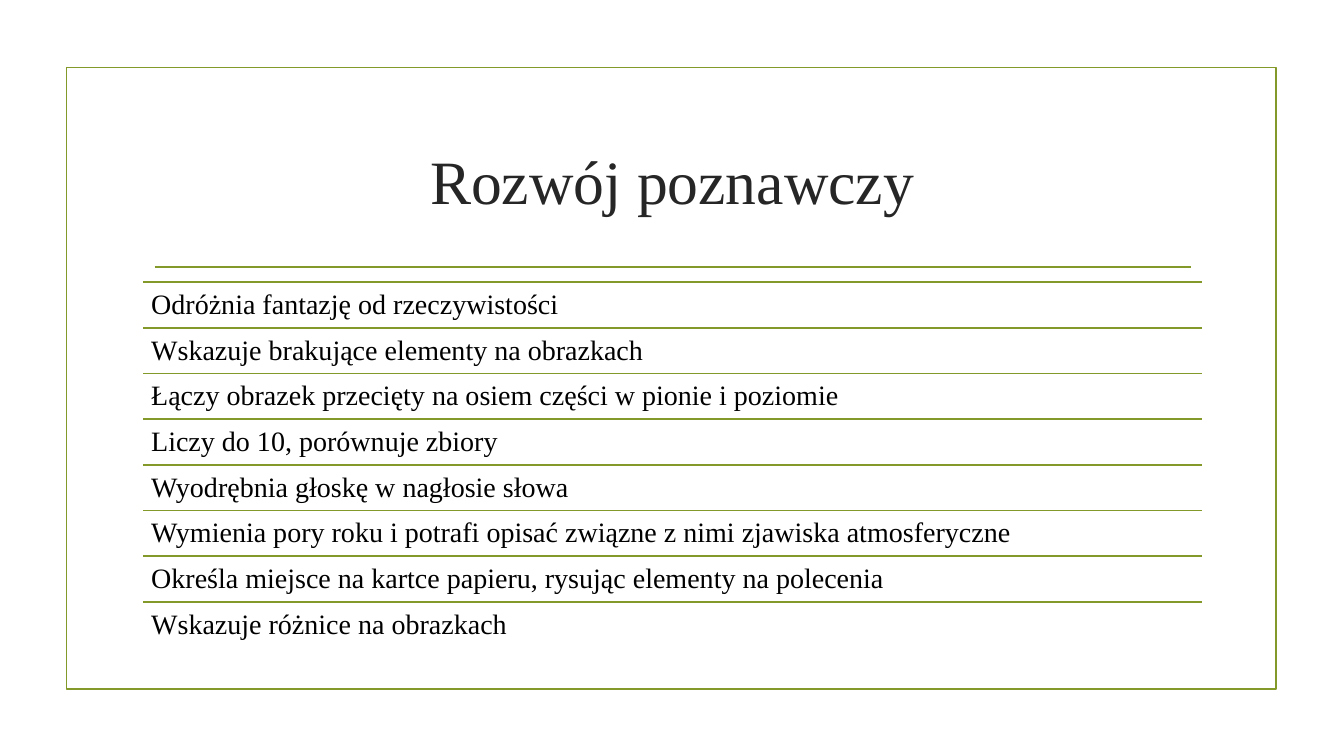
from dataclasses import dataclass

from lxml import etree
from pptx import Presentation
from pptx.dml.color import RGBColor
from pptx.enum.shapes import MSO_CONNECTOR, MSO_SHAPE
from pptx.enum.text import MSO_ANCHOR, PP_ALIGN
from pptx.oxml.ns import qn
from pptx.slide import Slide
from pptx.util import Inches, Pt

STRAIGHT = MSO_CONNECTOR.STRAIGHT
RECTANGLE = MSO_SHAPE.RECTANGLE
TOP, MIDDLE = MSO_ANCHOR.TOP, MSO_ANCHOR.MIDDLE
LEFT, CENTER = PP_ALIGN.LEFT, PP_ALIGN.CENTER

COLORS = {"olive": "83992A", "heading": "262626", "body": "000000"}
FONT = "Times New Roman"
SLIDE_WIDTH, SLIDE_HEIGHT = Inches(13.33), Inches(7.5)
LINE_WIDTH = Pt(1.25)


@dataclass(frozen=True)
class Area:
    """Position and size in percent of the slide's width and height."""
    left: float
    top: float
    width: float
    height: float = 0

    def emu(self) -> tuple[int, int, int, int]:
        return (across(self.left), down(self.top),
                across(self.width), down(self.height))


@dataclass(frozen=True)
class TextStyle:
    size: int
    color: str
    align: int
    anchor: int
    inset: float
    line_spacing: float


FRAME = Area(4.95, 8.93, 90.02, 82.27)
HEADING = Area(10.65, 14.27, 78.77, 19.07)
HEADING_RULE = Area(11.5, 35.33, 77.1)
SKILLS_TOP, SKILL_HEIGHT = 37.33, 6.04

HEADING_STYLE = TextStyle(44, "heading", CENTER, MIDDLE, 0.1, 1.0)
SKILL_STYLE = TextStyle(20, "body", LEFT, TOP, 0.08, 0.9)

SKILLS = [
    "Odróżnia fantazję od rzeczywistości",
    "Wskazuje brakujące elementy na obrazkach",
    "Łączy obrazek przecięty na osiem części w pionie i poziomie",
    "Liczy do 10, porównuje zbiory",
    "Wyodrębnia głoskę w nagłosie słowa",
    "Wymienia pory roku i potrafi opisać związne z nimi zjawiska atmosferyczne",
    "Określa miejsce na kartce papieru, rysując elementy na polecenia",
    "Wskazuje różnice na obrazkach",
]


def across(percent: float) -> int:
    return round(SLIDE_WIDTH * percent / 100)


def down(percent: float) -> int:
    return round(SLIDE_HEIGHT * percent / 100)


def rgb(name: str) -> RGBColor:
    return RGBColor.from_string(COLORS[name])


def draw_frame(slide: Slide, area: Area) -> None:
    frame = slide.shapes.add_shape(RECTANGLE, *area.emu())
    frame.shadow.inherit = False
    frame.fill.background()
    frame.line.color.rgb = rgb("olive")
    frame.line.width = LINE_WIDTH


def draw_rule(slide: Slide, area: Area) -> None:
    """Draw a horizontal line along the top of the area."""
    left, top, width, _ = area.emu()
    rule = slide.shapes.add_connector(STRAIGHT, left, top, left + width, top)
    rule.line.color.rgb = rgb("olive")
    rule.line.width = LINE_WIDTH
    etree.SubElement(rule._element.spPr, qn("a:effectLst"))


def write(slide: Slide, area: Area, words: str, style: TextStyle) -> None:
    frame = slide.shapes.add_textbox(*area.emu()).text_frame
    inset = Inches(style.inset)
    frame_format = {
        "word_wrap": True, "vertical_anchor": style.anchor,
        "margin_left": inset, "margin_right": inset,
        "margin_top": inset, "margin_bottom": inset,
    }
    for attribute, value in frame_format.items():
        setattr(frame, attribute, value)
    paragraph = frame.paragraphs[0]
    paragraph.alignment = style.align
    paragraph.line_spacing = style.line_spacing
    run = paragraph.add_run()
    run.text = words
    for attribute, value in {"name": FONT, "size": Pt(style.size)}.items():
        setattr(run.font, attribute, value)
    run.font.color.rgb = rgb(style.color)


def main() -> None:
    presentation = Presentation()
    presentation.slide_width = SLIDE_WIDTH
    presentation.slide_height = SLIDE_HEIGHT
    slide = presentation.slides.add_slide(presentation.slide_layouts[6])

    draw_frame(slide, FRAME)
    draw_rule(slide, HEADING_RULE)
    write(slide, HEADING, "Rozwój poznawczy", HEADING_STYLE)
    for row, skill in enumerate(SKILLS):
        area = Area(HEADING.left, SKILLS_TOP + row * SKILL_HEIGHT,
                    HEADING.width, SKILL_HEIGHT)
        draw_rule(slide, area)
        write(slide, area, skill, SKILL_STYLE)

    presentation.save("out.pptx")


if __name__ == "__main__":
    main()
